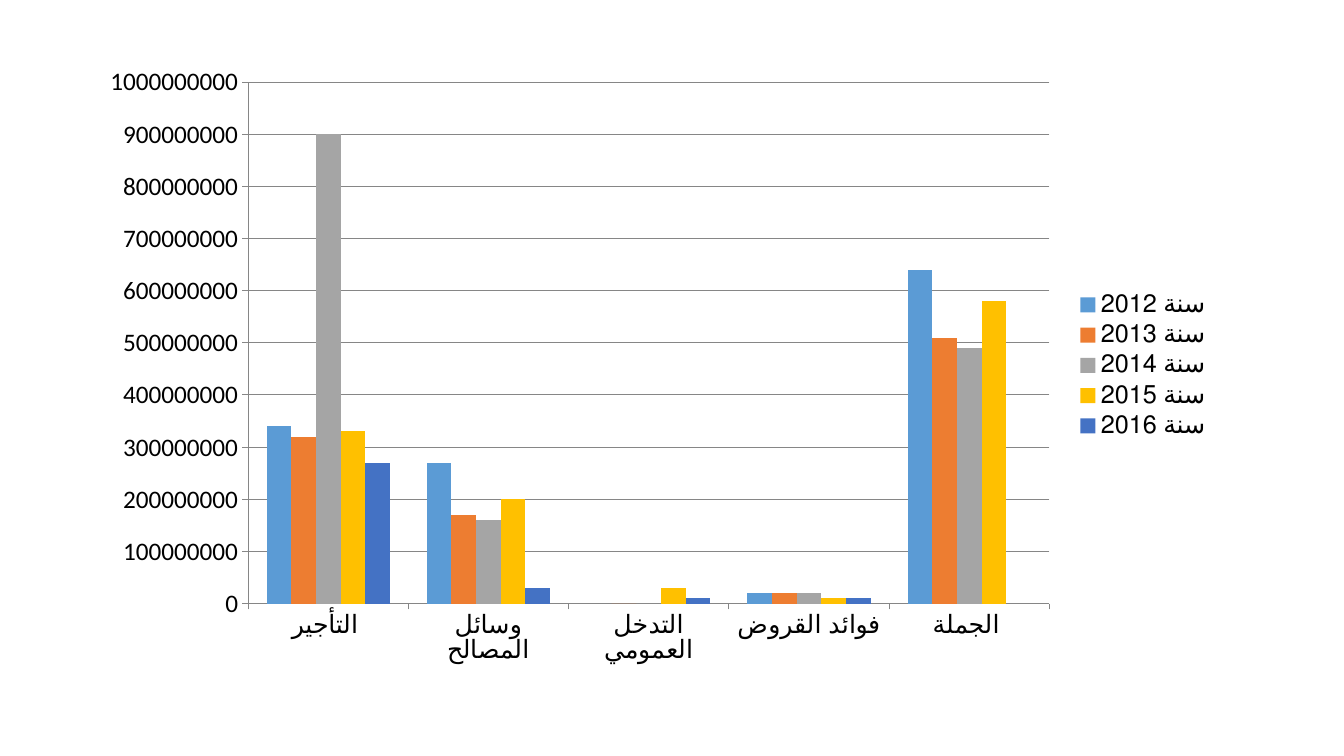
from pptx import Presentation
from pptx.chart.data import CategoryChartData
from pptx.dml.color import RGBColor
from pptx.enum.chart import XL_CHART_TYPE, XL_LEGEND_POSITION, XL_TICK_MARK
from pptx.util import Inches, Pt

MILLION = 1_000_000
CATEGORIES = ["التأجير ", "وسائل المصالح", "التدخل العمومي", "فوائد القروض", "الجملة "]
SPENDING = {
    "سنة 2012": [340, 270, None, 20, 640],
    "سنة 2013": [320, 170, 0, 20, 510],
    "سنة 2014": [900, 160, 0, 20, 490],
    "سنة 2015": [330, 200, 30, 10, 580],
    "سنة 2016": [270, 30, 10, 10, None],
}
THEME = {
    "font": "Calibri",
    "size": Pt(18),
    "text": RGBColor.from_string("000000"),
    "line": RGBColor.from_string("868686"),
    "series": ["5B9BD5", "ED7D31", "A5A5A5", "FFC000", "4472C4"],
}


def add_spending_chart(s):
    data = CategoryChartData(number_format="General")
    data.categories = CATEGORIES
    for year, amounts in SPENDING.items():
        data.add_series(year, [None if a is None else a * MILLION for a in amounts])
    chart = s.shapes.add_chart(
        XL_CHART_TYPE.COLUMN_CLUSTERED,
        Inches(0.87), Inches(0.54), Inches(11.25), Inches(6.17), data,
    ).chart
    chart.has_title = False
    chart.font.name = THEME["font"]
    chart.font.size = THEME["size"]
    chart.font.color.rgb = THEME["text"]
    chart.has_legend = True
    chart.legend.position = XL_LEGEND_POSITION.RIGHT
    chart.legend.include_in_layout = False

    plot = chart.plots[0]
    plot.gap_width = 150
    plot.overlap = 0
    plot.vary_by_categories = False
    for series, color in zip(plot.series, THEME["series"]):
        series.format.fill.solid()
        series.format.fill.fore_color.rgb = RGBColor.from_string(color)
        series.invert_if_negative = False

    value_axis = chart.value_axis
    value_axis.minimum_scale = 0
    value_axis.maximum_scale = 1000 * MILLION
    value_axis.major_unit = 100 * MILLION
    value_axis.has_major_gridlines = True
    for axis in (chart.category_axis, value_axis):
        axis.major_tick_mark = XL_TICK_MARK.OUTSIDE
        axis.minor_tick_mark = XL_TICK_MARK.NONE
    for part in (chart.category_axis, value_axis, value_axis.major_gridlines):
        part.format.line.color.rgb = THEME["line"]
        part.format.line.width = Pt(0.75)


def main():
    prs = Presentation()
    prs.slide_width = Inches(13.33)
    prs.slide_height = Inches(7.5)
    s = prs.slides.add_slide(prs.slide_layouts[6])
    add_spending_chart(s)
    prs.save("out.pptx")


if __name__ == "__main__":
    main()
